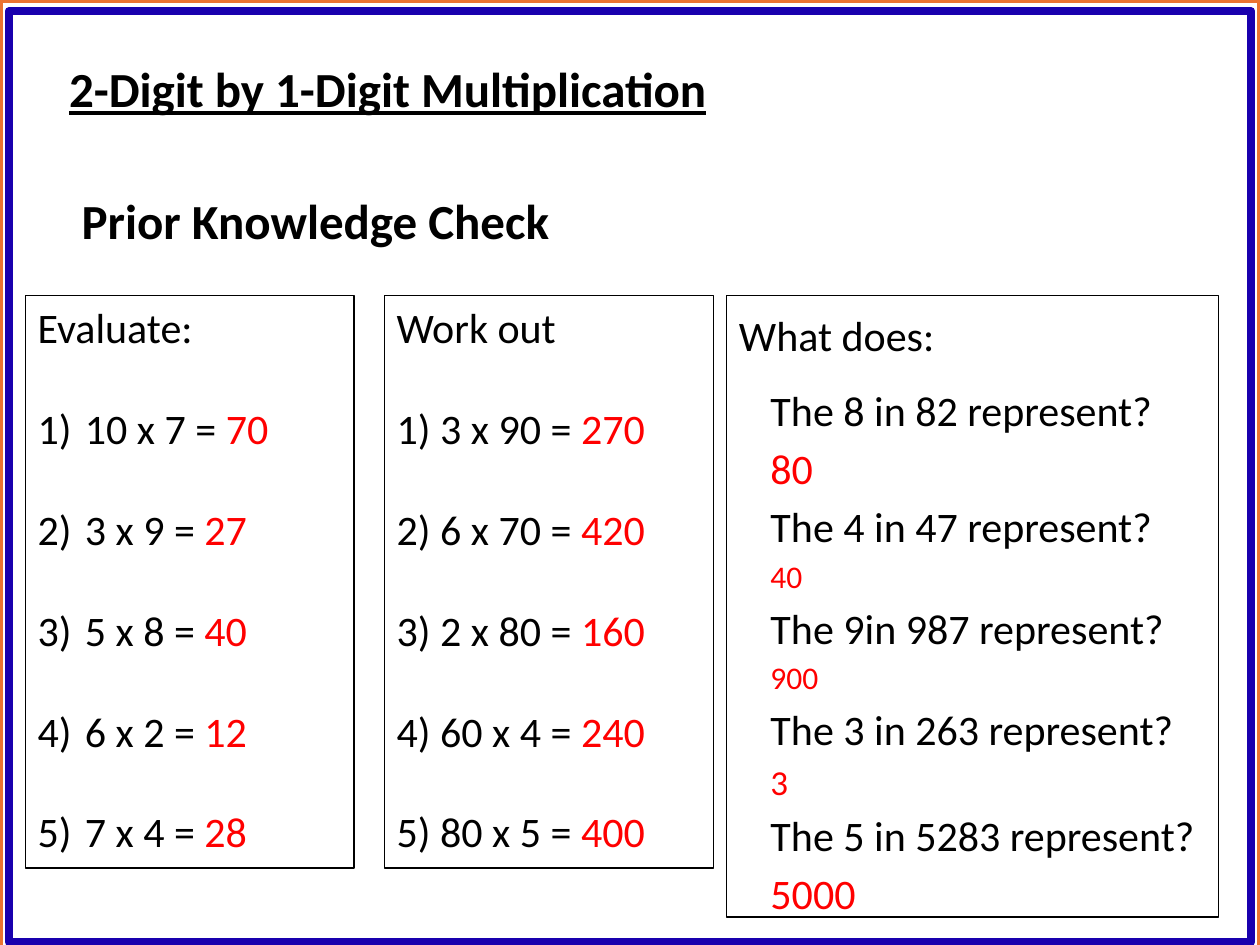
from typing import NamedTuple

from lxml.etree import SubElement
from pptx import Presentation
from pptx.dml.color import RGBColor
from pptx.enum.shapes import MSO_SHAPE as Shape
from pptx.enum.text import MSO_ANCHOR as Anchor, PP_ALIGN as Align
from pptx.oxml.ns import qn
from pptx.util import Pt

BLACK = RGBColor(0x00, 0x00, 0x00)
RED = RGBColor(0xFF, 0x00, 0x00)
BLUE = RGBColor(0x19, 0x00, 0xAE)
ORANGE = RGBColor(0xEB, 0x73, 0x31)
FONT = "Calibri"


class Box(NamedTuple):
    left: float
    top: float
    width: float
    height: float

    def lengths(self) -> list:
        return [Pt(v) for v in self]


class Sum(NamedTuple):
    task: str
    answer: str


class Place(NamedTuple):
    task: str
    answer: str
    size: int


EASY = [Sum("10 x 7", "70"), Sum("3 x 9", "27"), Sum("5 x 8", "40"),
        Sum("6 x 2", "12"), Sum("7 x 4", "28")]
TENS = [Sum("3 x 90", "270"), Sum("6 x 70", "420"), Sum("2 x 80", "160"),
        Sum("60 x 4", "240"), Sum("80 x 5", "400")]
DIGITS = [Place("The 8 in 82 represent?", "80", 24),
          Place("The 4 in 47 represent?", "40", 18),
          Place("The 9in 987 represent?", "900", 18),
          Place("The 3 in 263 represent?", "3", 20),
          Place("The 5 in 5283 represent?", "5000", 24)]


def frame(slide, box: Box, color: RGBColor, weight: float):
    """Draw an unfilled outline and return its text frame."""
    rect = slide.shapes.add_shape(Shape.RECTANGLE, *box.lengths())
    rect.shadow.inherit = False
    rect.fill.background()
    rect.line.color.rgb = color
    rect.line.width = Pt(weight)
    body = rect.text_frame
    body.word_wrap = True
    body.vertical_anchor = Anchor.TOP
    return body


def write(body, text: str, answer: str = "", *, size: float = 24,
          color: RGBColor = BLACK, bold: bool = False, line: bool = False,
          before: float = 0, after: float = 0, lead: float = 1,
          left: float = 0, first: float = 0, number: bool = False) -> None:
    """Add a paragraph; an answer follows the text in red."""
    para = body.paragraphs[0]
    if para.runs:
        para = body.add_paragraph()
    para.alignment = Align.LEFT
    para.space_before, para.space_after = Pt(before), Pt(after)
    para.line_spacing = lead
    props = para._p.get_or_add_pPr()
    props.set("marL", str(Pt(left)))
    props.set("indent", str(Pt(first)))
    if number:
        SubElement(props, qn("a:buFont"), typeface="+mj-lt")
        SubElement(props, qn("a:buAutoNum"), type="arabicParenR")
    for words, tint in ((text, color), (answer, RED)):
        if words:
            run = para.add_run()
            run.text = words
            font = run.font
            font.name, font.size = FONT, Pt(size)
            font.bold, font.underline = bold, line
            font.color.rgb = tint


def label(slide, box: Box, text: str, **style) -> None:
    body = slide.shapes.add_textbox(*box.lengths()).text_frame
    body.word_wrap = True
    write(body, text, size=28, bold=True, **style)


def main() -> None:
    deck = Presentation()
    deck.slide_width, deck.slide_height = Pt(720), Pt(540)
    slide = deck.slides.add_slide(deck.slide_layouts[6])

    # Page borders
    frame(slide, Box(0, 0, 720, 545), ORANGE, 3)
    frame(slide, Box(5, 6.5, 710, 532), BLUE, 4.5)

    # Headings
    label(slide, Box(32.4, 30.2, 496, 41), "2-Digit by 1-Digit Multiplication",
          line=True)
    label(slide, Box(39.6, 105.1, 283, 41), "Prior Knowledge Check")

    # Sums numbered by the list
    body = frame(slide, Box(14.4, 169, 188, 327), BLACK, 0.75)
    write(body, "Evaluate:")
    for item in EASY:
        write(body, f"{item.task} = ", item.answer, before=28.8,
              left=27, first=-27, number=True)

    # Sums numbered in the text
    body = frame(slide, Box(219.6, 169, 188, 327), BLACK, 0.75)
    write(body, "Work out")
    for n, item in enumerate(TENS, 1):
        write(body, f"{n}) {item.task} = ", item.answer, before=28.8)

    # Place value questions
    body = frame(slide, Box(415.2, 169, 281, 355), BLACK, 0.75)
    write(body, "What does:", lead=1.15, after=10)
    for item in DIGITS:
        write(body, item.task, lead=1.15, left=36, first=-18)
        write(body, item.answer, size=item.size, color=RED, lead=1.15,
              left=36, first=-18)

    deck.save("out.pptx")


if __name__ == "__main__":
    main()
